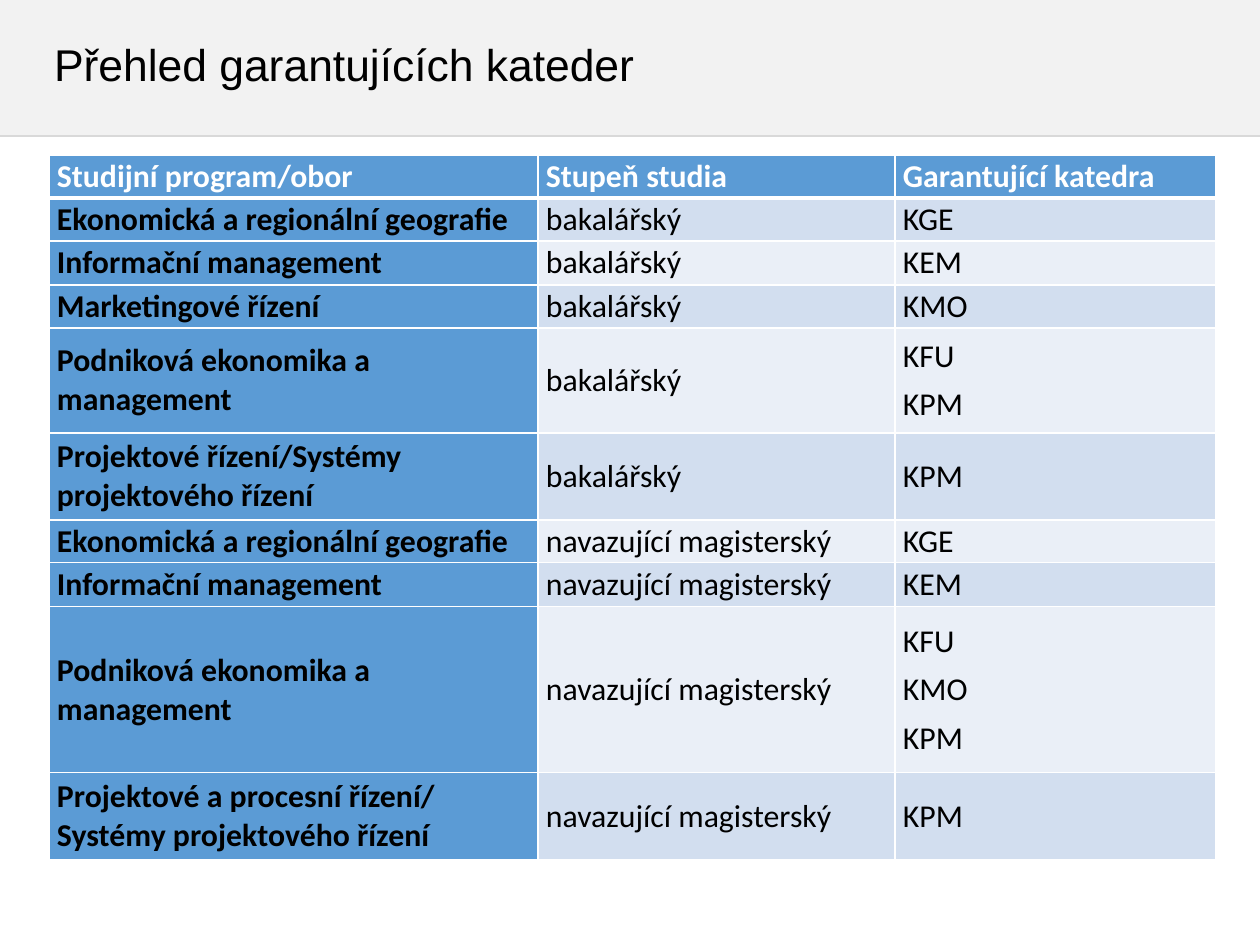
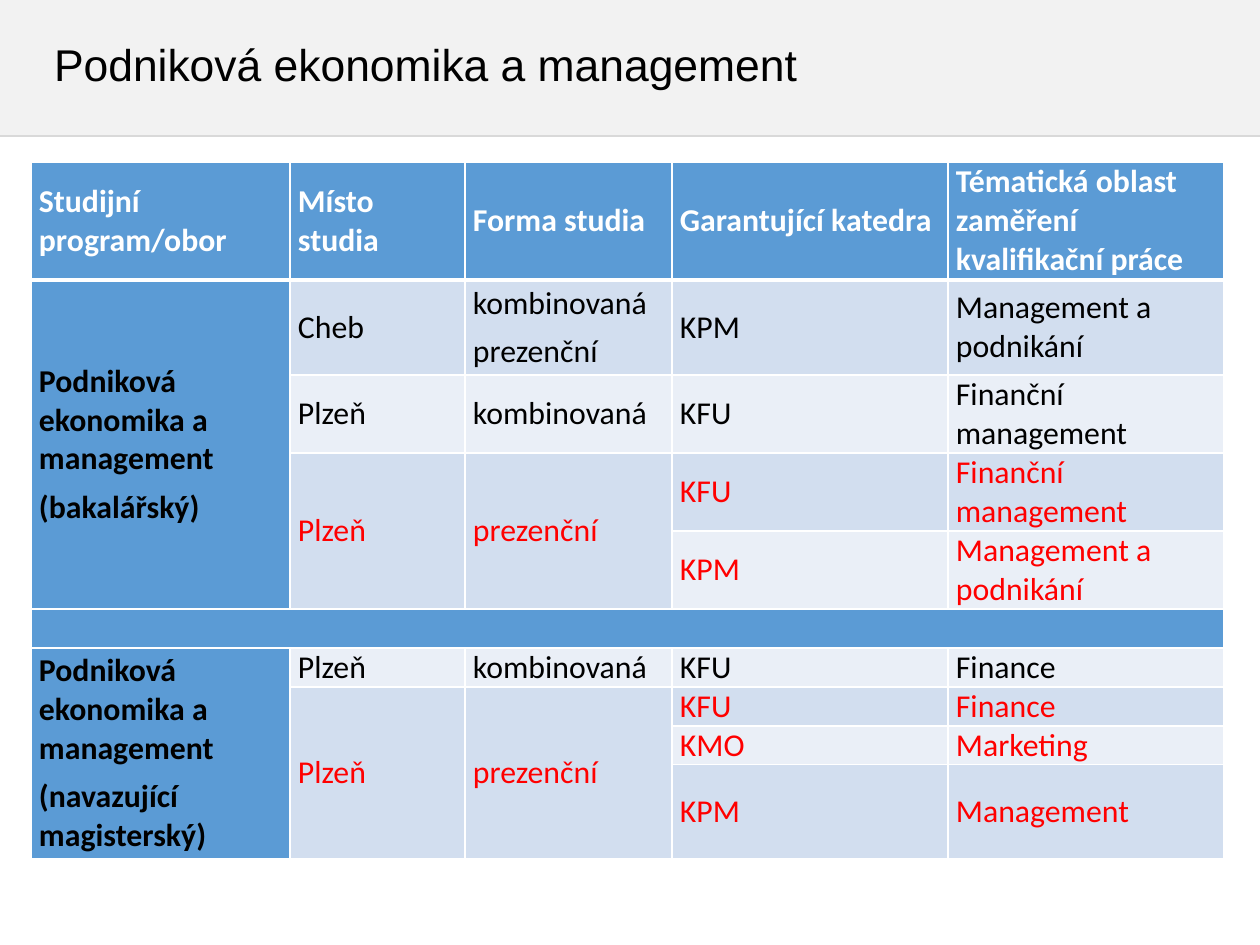
"""Build two slides that list study programmes and the departments behind them."""
import dataclasses

import lxml.etree
import pptx
import pptx.dml.color
import pptx.enum.shapes
import pptx.enum.text
import pptx.oxml.ns
import pptx.util

SCALE = 8000


def px(length):
    return pptx.util.Emu(length * SCALE)


def rgb(value):
    return pptx.dml.color.RGBColor.from_string(value)


@dataclasses.dataclass(frozen=True)
class Theme:
    title_font: str = "Arial"
    table_font: str = "Calibri"
    title_size: int = 28
    table_size: int = 20
    paragraph_gap: int = 6
    text: str = "000000"
    white: str = "FFFFFF"
    highlight: str = "FF0000"
    accent: str = "5B9BD5"
    dark_band: str = "D2DEEF"
    light_band: str = "EAEFF7"
    header: str = "F2F2F2"
    header_rule: str = "D9D9D9"
    border: int = 1
    header_border: int = 3


class Deck:
    width, height = 1260, 945
    header_height = 135

    def __init__(self, theme):
        self.theme = theme
        self.deck = pptx.Presentation()
        self.deck.slide_width = px(self.width)
        self.deck.slide_height = px(self.height)
        self.layout = self.deck.slide_layouts[5]
        for holder in list(self.layout.placeholders):
            if holder.placeholder_format.idx != 0:
                holder._element.getparent().remove(holder._element)
        self.page = None

    def start_page(self, title):
        self.page = self.deck.slides.add_slide(self.layout)
        if len(self.deck.slides) == 1:
            self.shared_header()
        self.title(title)

    def shared_header(self):
        bands = [
            self.band(self.header_height, 2, self.theme.header_rule),
            self.band(0, self.header_height, self.theme.header),
        ]
        for position, band in enumerate(bands, start=2):
            self.layout.shapes._spTree.insert(position, band._element)

    def band(self, top, height, color):
        band = self.page.shapes.add_shape(
            pptx.enum.shapes.MSO_SHAPE.RECTANGLE, 0, px(top), px(self.width), px(height))
        band.shadow.inherit = False
        band.fill.solid()
        band.fill.fore_color.rgb = rgb(color)
        band.line.fill.background()
        return band

    def title(self, text):
        box = self.page.shapes.title
        box.left, box.top = px(0), px(0)
        box.width, box.height = px(self.width), px(self.header_height)
        frame = box.text_frame
        frame.auto_size = pptx.enum.text.MSO_AUTO_SIZE.NONE
        frame.word_wrap = True
        frame.vertical_anchor = pptx.enum.text.MSO_ANCHOR.MIDDLE
        frame.margin_left = frame.margin_right = px(54)
        frame.margin_top = frame.margin_bottom = 0
        para = frame.paragraphs[0]
        para.alignment = pptx.enum.text.PP_ALIGN.LEFT
        para.line_spacing = 0.9
        self.span(para, text, self.theme.title_font, self.theme.title_size, self.theme.text)

    def span(self, para, text, font, size, color, bold=False):
        span = para.add_run()
        span.text = text
        span.font.name = font
        span.font.size = pptx.util.Pt(size)
        span.font.bold = bold
        span.font.color.rgb = rgb(color)

    def table(self, left, top, widths, heights, rows, merges=(), highlighted=()):
        frame = self.page.shapes.add_table(
            len(heights), len(widths), px(left), px(top), px(sum(widths)), px(sum(heights)))
        table = frame.table
        table.horz_banding = False
        for column, width in zip(table.columns, widths):
            column.width = px(width)
        for line, height in zip(table.rows, heights):
            line.height = px(height)
        for row, texts in enumerate(rows):
            for column, text in enumerate(texts):
                self.cell(table.cell(row, column), row, column, text, row in highlighted)
        for row, column, last_row, last_column in merges:
            table.cell(row, column).merge(table.cell(last_row, last_column))

    def cell(self, cell, row, column, text, highlighted):
        theme = self.theme
        self.borders(cell, row)
        heading = row == 0 or column == 0
        band = theme.dark_band if row % 2 else theme.light_band
        cell.fill.solid()
        cell.fill.fore_color.rgb = rgb(theme.accent if heading else band)
        cell.vertical_anchor = pptx.enum.text.MSO_ANCHOR.MIDDLE
        cell.margin_left = cell.margin_right = px(8)
        cell.margin_top = cell.margin_bottom = 0
        if not text:
            return
        color = theme.text
        if row == 0:
            color = theme.white
        elif highlighted and column > 0:
            color = theme.highlight
        for index, words in enumerate(text.split("\n")):
            para = cell.text_frame.add_paragraph() if index else cell.text_frame.paragraphs[0]
            if index:
                para.space_before = pptx.util.Pt(theme.paragraph_gap)
            self.span(para, words, theme.table_font, theme.table_size, color, heading)

    def borders(self, cell, row):
        qn = pptx.oxml.ns.qn
        properties = cell._tc.get_or_add_tcPr()
        thick_side = {0: "lnB", 1: "lnT"}.get(row)
        for side in ("lnL", "lnR", "lnT", "lnB"):
            points = self.theme.header_border if side == thick_side else self.theme.border
            line = lxml.etree.SubElement(
                properties, qn("a:" + side), w=str(int(pptx.util.Pt(points))))
            fill = lxml.etree.SubElement(line, qn("a:solidFill"))
            lxml.etree.SubElement(fill, qn("a:srgbClr"), val=self.theme.white)


DEPARTMENTS = [
    ("Studijní program/obor", "Stupeň studia", "Garantující katedra"),
    ("Ekonomická a regionální geografie", "bakalářský", "KGE"),
    ("Informační management", "bakalářský", "KEM"),
    ("Marketingové řízení", "bakalářský", "KMO"),
    ("Podniková ekonomika a management", "bakalářský", "KFU\nKPM"),
    ("Projektové řízení/Systémy projektového řízení", "bakalářský", "KPM"),
    ("Ekonomická a regionální geografie", "navazující magisterský", "KGE"),
    ("Informační management", "navazující magisterský", "KEM"),
    ("Podniková ekonomika a management", "navazující magisterský", "KFU\nKMO\nKPM"),
    ("Projektové a procesní řízení/ Systémy projektového řízení",
     "navazující magisterský", "KPM"),
]

BUSINESS = [
    ("Studijní program/obor", "Místo studia", "Forma studia", "Garantující katedra",
     "Tématická oblast zaměření kvalifikační práce"),
    ("Podniková ekonomika a management\n(bakalářský)", "Cheb", "kombinovaná\nprezenční",
     "KPM", "Management a podnikání"),
    (None, "Plzeň", "kombinovaná", "KFU", "Finanční management"),
    (None, "Plzeň", "prezenční", "KFU", "Finanční management"),
    (None, None, None, "KPM", "Management a podnikání"),
    (None, None, None, None, None),
    ("Podniková ekonomika a management\n(navazující magisterský)", "Plzeň", "kombinovaná",
     "KFU", "Finance"),
    (None, "Plzeň", "prezenční", "KFU", "Finance"),
    (None, None, None, "KMO", "Marketing"),
    (None, None, None, "KPM", "Management"),
]


def main():
    deck = Deck(Theme())

    deck.start_page("Přehled garantujících kateder")
    deck.table(
        49, 155, [489, 357, 321], [43, 43, 44, 43, 105, 87, 43, 44, 166, 87], DEPARTMENTS)

    deck.start_page("Podniková ekonomika a management")
    deck.table(
        31, 162, [259, 175, 207, 276, 276], [118, 95, 78, 78, 78, 39, 39, 39, 39, 94], BUSINESS,
        merges=[(1, 0, 4, 0), (3, 1, 4, 1), (3, 2, 4, 2), (5, 0, 5, 4),
                (6, 0, 9, 0), (7, 1, 9, 1), (7, 2, 9, 2)],
        highlighted={3, 4, 7, 8, 9})

    deck.deck.save("out.pptx")


if __name__ == "__main__":
    main()
